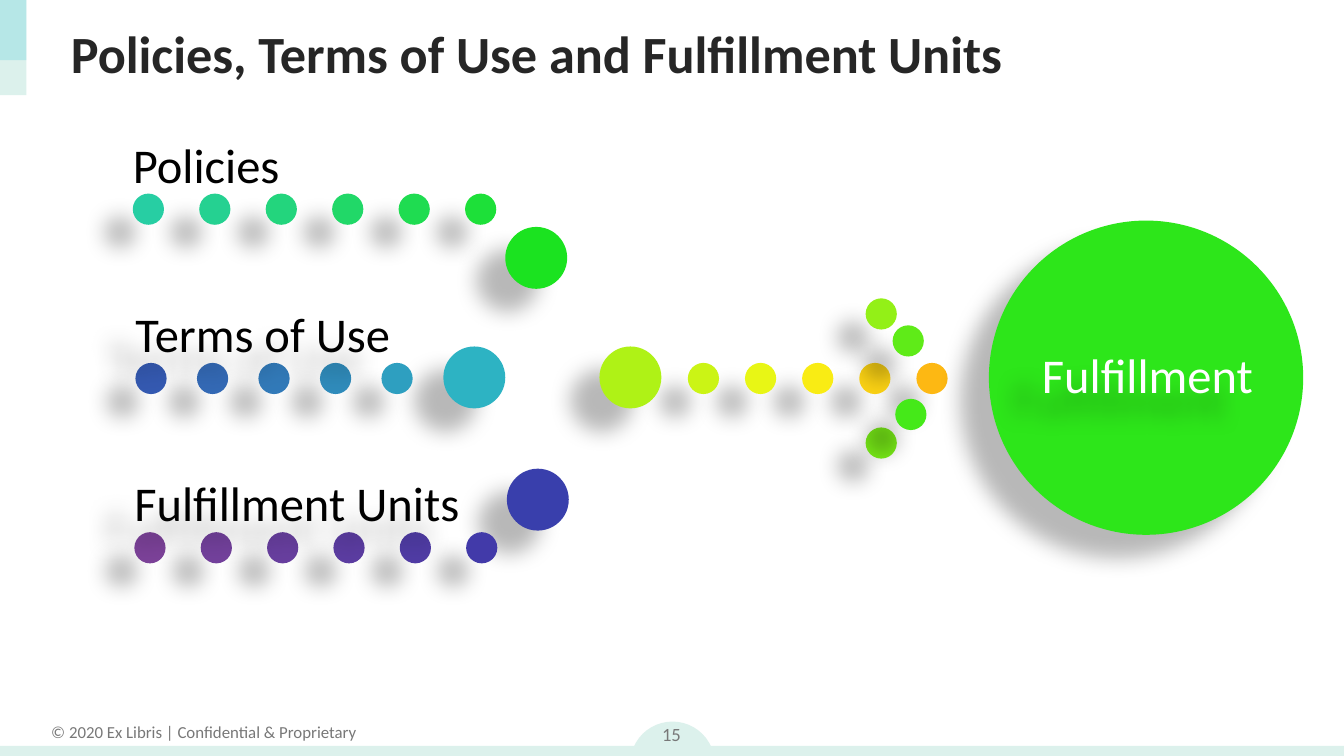
from lxml.etree import SubElement
from pptx import Presentation
from pptx.dml.color import RGBColor
from pptx.enum.shapes import MSO_SHAPE
from pptx.enum.text import MSO_ANCHOR, PP_ALIGN
from pptx.oxml.ns import qn
from pptx.util import Cm, Pt

FONT = "Calibri"
SMALL, LARGE = 0.59, 1.17
MINT = "DCF1EC"

# All positions are in centimetres; dot colours run from right to left.
TRACKS = [
    {"label": "Policies", "label_width": 6.88, "label_shadow": False,
     "first": 2.51, "last": 8.79, "top": 3.66,
     "end": (9.55, 4.29, "1BE320"),
     "dots": ["1DE039", "1FDC51", "21D868", "23D57D", "25D191", "27CEA3"]},
    {"label": "Terms of Use", "label_width": 5.21, "label_shadow": True,
     "first": 2.56, "last": 7.21, "top": 6.86,
     "end": (8.38, 6.55, "2DB3C3"),
     "dots": ["2E9FC0", "308CBC", "327AB9", "346AB6", "355AB2"]},
    {"label": "Fulfillment Units", "label_width": 6.88, "label_shadow": True,
     "first": 2.54, "last": 8.81, "top": 10.06,
     "end": (9.58, 8.86, "393FAC"),
     "dots": ["423AA9", "503CA5", "5C3DA2", "683F9F", "73419C", "7C4299"]},
]
ARROW = {"first": 13.0, "last": 17.32, "top": 6.86,
         "dots": ["FDB813", "FBD214", "F9EC14", "E8F615", "CBF415"]}
ARROW_START = (11.33, 6.55, "AFF216")
ARROW_HEAD = [(16.36, 5.64, "93F017"), (16.36, 8.08, "79ED17"),
              (16.87, 6.15, "5FEB18"), (16.92, 7.54, "45E919")]
LABEL_HEIGHT = 1.52


def color(value):
    return RGBColor.from_string(value)


def add_alpha(element, percent):
    SubElement(element, qn("a:alpha")).set("val", str(percent * 1000))


def add_shadow(shape):
    """Cast a soft shadow towards the lower left."""
    effects = SubElement(shape._element.spPr, qn("a:effectLst"))
    shadow = SubElement(effects, qn("a:outerShdw"), blurRad=str(Pt(11.8)),
                        dist=str(Pt(19.7)), dir=str(141 * 60000),
                        algn="ctr", rotWithShape="0")
    add_alpha(SubElement(shadow, qn("a:srgbClr"), val="000000"), 28)


def add_filled(slide, kind, left, top, width, height, fill, alpha=None):
    shape = slide.shapes.add_shape(kind, Cm(left), Cm(top), Cm(width), Cm(height))
    shape.fill.solid()
    shape.fill.fore_color.rgb = color(fill)
    shape.line.fill.background()
    if alpha is None:
        shape.shadow.inherit = False
    else:
        add_alpha(shape._element.spPr.find(".//" + qn("a:srgbClr")), alpha)
        shape.shadow.inherit = False
    return shape


def add_circle(slide, left, top, diameter, fill):
    circle = add_filled(slide, MSO_SHAPE.OVAL, left, top, diameter, diameter, fill)
    effects = circle._element.spPr.find(qn("a:effectLst"))
    circle._element.spPr.remove(effects)
    add_shadow(circle)


def add_dots(slide, row):
    """Space a row of dots evenly, drawing from right to left."""
    step = (row["last"] - row["first"]) / (len(row["dots"]) - 1)
    for index, fill in enumerate(row["dots"]):
        add_circle(slide, row["last"] - index * step, row["top"], SMALL, fill)


def add_text(slide, text, left, top, width, height, size=26, fill="000000",
             bold=False, align=PP_ALIGN.LEFT, anchor=MSO_ANCHOR.MIDDLE,
             inset=None, spacing=None, wrap=True, shadow=False):
    box = slide.shapes.add_textbox(Cm(left), Cm(top), Cm(width), Cm(height))
    frame = box.text_frame
    frame.word_wrap = wrap
    frame.vertical_anchor = anchor
    if inset is not None:
        frame.margin_left = frame.margin_right = Cm(inset)
        frame.margin_top = frame.margin_bottom = Cm(inset)
    paragraph = frame.paragraphs[0]
    paragraph.text = text
    paragraph.alignment = align
    paragraph.line_spacing = spacing
    paragraph.font.name = FONT
    paragraph.font.size = Pt(size)
    paragraph.font.bold = bold
    paragraph.font.color.rgb = color(fill)
    if shadow:
        add_shadow(box)


def add_frame(slide):
    """Draw the corner and footer decoration, the footer texts and the title."""
    add_filled(slide, MSO_SHAPE.OVAL, 11.91, 13.64, 1.6, 1.6, MINT)
    add_text(slide, "© 2020 Ex Libris | Confidential & Proprietary",
             0.69, 13.51, 6.32, 0.64, size=9, fill="787878",
             align=PP_ALIGN.CENTER, anchor=MSO_ANCHOR.TOP, wrap=False)
    add_filled(slide, MSO_SHAPE.RECTANGLE, 0, 14.1, 25.4, 0.28, MINT)
    add_filled(slide, MSO_SHAPE.RECTANGLE, 0, 0, 0.5, 1.8, MINT)
    add_filled(slide, MSO_SHAPE.RECTANGLE, 0, 0, 0.5, 1.14, "50CFDA", alpha=27)
    add_text(slide, "15", 11.94, 13.36, 1.5, 1.02, size=10, fill="787878",
             align=PP_ALIGN.CENTER)
    add_text(slide, "Policies, Terms of Use and Fulfillment Units",
             1.09, 0.2, 23.39, 1.6, size=28, fill="262626", bold=True)


def main():
    presentation = Presentation()
    presentation.slide_width, presentation.slide_height = Cm(25.4), Cm(14.29)
    slide = presentation.slides.add_slide(presentation.slide_layouts[6])
    add_frame(slide)

    for track in TRACKS:
        left, top, fill = track["end"]
        add_circle(slide, left, top, LARGE, fill)
        add_dots(slide, track)
        add_text(slide, track["label"], track["first"], track["top"] - LABEL_HEIGHT,
                 track["label_width"], LABEL_HEIGHT, anchor=MSO_ANCHOR.BOTTOM,
                 inset=0, spacing=0.9, shadow=track["label_shadow"])

    add_dots(slide, ARROW)
    left, top, fill = ARROW_START
    add_circle(slide, left, top, LARGE, fill)
    for left, top, fill in ARROW_HEAD:
        add_circle(slide, left, top, SMALL, fill)

    add_circle(slide, 18.69, 4.17, 5.94, "2DE61A")
    add_text(slide, "Fulfillment", 19.58, 5.03, 4.22, 4.22, fill="FFFFFF",
             align=PP_ALIGN.CENTER, inset=0.1, spacing=0.9, shadow=True)
    presentation.save("out.pptx")


if __name__ == "__main__":
    main()
